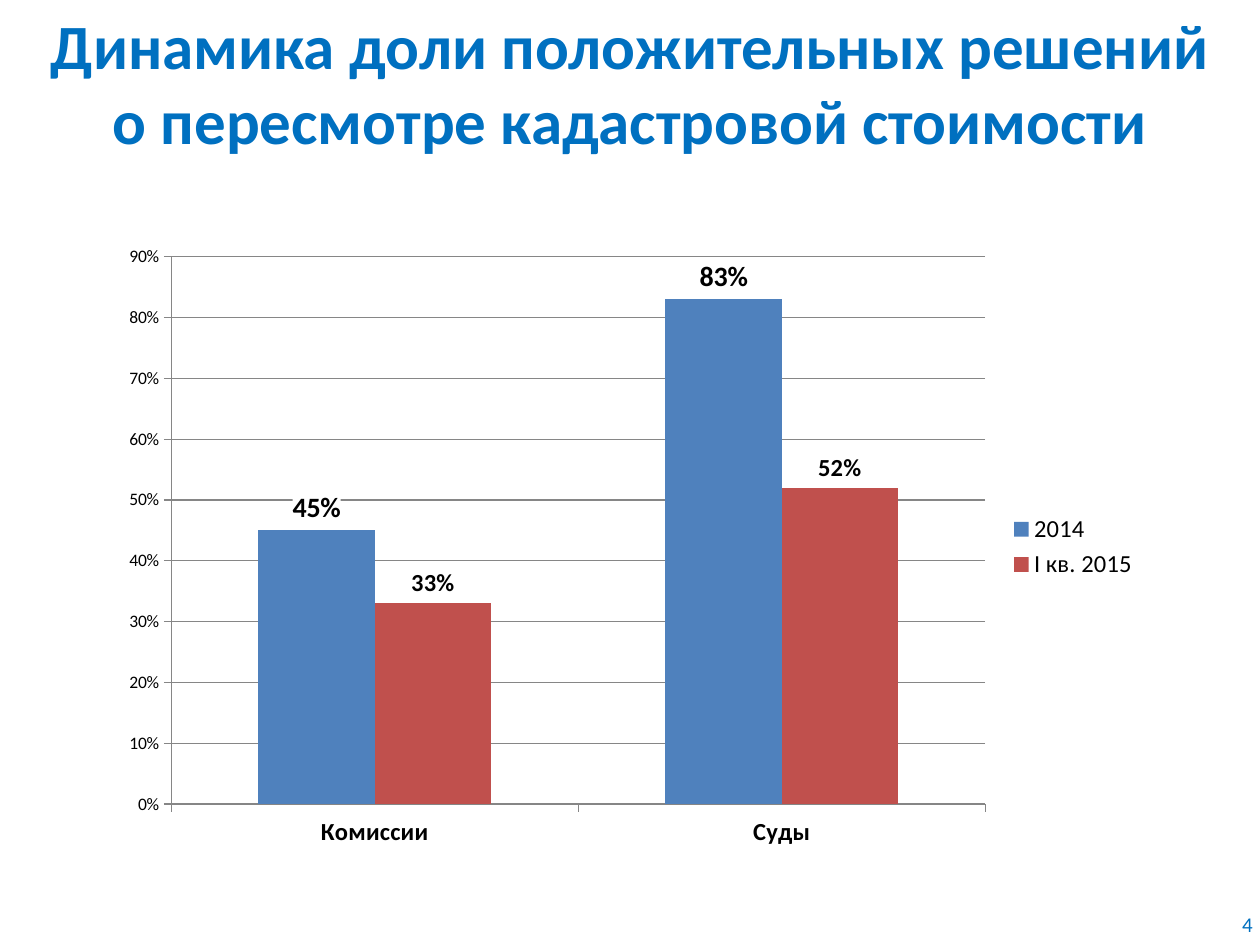
from dataclasses import dataclass

from lxml.etree import fromstring
from pptx import Presentation
from pptx.chart.data import CategoryChartData
from pptx.dml.color import RGBColor
from pptx.enum.chart import XL_CHART_TYPE as ChartType
from pptx.enum.chart import XL_LABEL_POSITION as LabelPosition
from pptx.enum.chart import XL_LEGEND_POSITION as LegendPosition
from pptx.enum.chart import XL_TICK_MARK as TickMark
from pptx.enum.text import MSO_ANCHOR as Anchor
from pptx.enum.text import MSO_AUTO_SIZE as AutoSize
from pptx.enum.text import PP_ALIGN as Align
from pptx.util import Pt


@dataclass(frozen=True)
class Theme:
    font: str = "Calibri"
    accent: RGBColor = RGBColor(0x00, 0x70, 0xC0)
    text: RGBColor = RGBColor(0x00, 0x00, 0x00)
    grid: RGBColor = RGBColor(0x86, 0x86, 0x86)
    blue: RGBColor = RGBColor(0x4F, 0x81, 0xBD)
    red: RGBColor = RGBColor(0xC0, 0x50, 0x4D)
    title_size: int = 36
    label_size: int = 16
    chart_size: int = 14
    page_size: int = 12
    axis_size: int = 10


THEME = Theme()
TITLE = ["Динамика доли положительных решений", "о пересмотре кадастровой стоимости"]
CATEGORIES = ["Комиссии", "Суды"]
# Name, shares, bar colour, label size
SERIES = [
    ("2014", [0.45, 0.83], THEME.blue, THEME.label_size),
    ("I кв. 2015", [0.33, 0.52], THEME.red, THEME.chart_size),
]
WHITE_LABEL = (
    '<c:spPr xmlns:c="http://schemas.openxmlformats.org/drawingml/2006/chart"'
    ' xmlns:a="http://schemas.openxmlformats.org/drawingml/2006/main">'
    '<a:solidFill><a:srgbClr val="FFFFFF"/></a:solidFill></c:spPr>'
)


def apply(target, **values):
    for name, value in values.items():
        setattr(target, name, value)


def style_font(font, size, color, bold=False):
    apply(font, name=THEME.font, size=Pt(size), bold=bold)
    font.color.rgb = color


def write_lines(shape, lines, size, align, bold=False):
    frame = shape.text_frame
    apply(frame, word_wrap=True, auto_size=AutoSize.NONE, vertical_anchor=Anchor.TOP)
    for index, line in enumerate(lines):
        para = frame.paragraphs[0] if index == 0 else frame.add_paragraph()
        para.alignment = align
        span = para.add_run()
        span.text = line
        style_font(span.font, size, THEME.accent, bold)


def add_title(page):
    title = page.shapes.title
    apply(title, left=Pt(0), top=Pt(0), width=Pt(720), height=Pt(94.5))
    write_lines(title, TITLE, THEME.title_size, Align.CENTER, bold=True)


def add_page_number(page, number):
    box = page.shapes.add_textbox(Pt(680.5), Pt(517.5), Pt(42.5), Pt(22))
    write_lines(box, [number], THEME.page_size, Align.RIGHT)


def style_axes(chart):
    category, value = chart.category_axis, chart.value_axis
    apply(value, has_major_gridlines=True, minimum_scale=0, maximum_scale=0.9, major_unit=0.1)
    apply(value.tick_labels, number_format="0%", number_format_is_linked=False)
    style_font(value.tick_labels.font, THEME.axis_size, THEME.text)
    style_font(category.tick_labels.font, THEME.chart_size, THEME.text, bold=True)
    for axis in (category, value):
        axis.major_tick_mark = TickMark.OUTSIDE
    for line in (category.format.line, value.format.line, value.major_gridlines.format.line):
        line.color.rgb = THEME.grid
        line.width = Pt(0.75)


def style_series(series, color, label_size):
    series.format.fill.solid()
    series.format.fill.fore_color.rgb = color
    labels = series.data_labels
    apply(labels, show_value=True, number_format="0%", number_format_is_linked=False,
          position=LabelPosition.OUTSIDE_END)
    style_font(labels.font, label_size, THEME.text, bold=True)
    return labels


def add_share_chart(page):
    data = CategoryChartData(number_format="0%")
    data.categories = CATEGORIES
    for name, shares, _, _ in SERIES:
        data.add_series(name, shares)
    chart = page.shapes.add_chart(
        ChartType.COLUMN_CLUSTERED, Pt(62), Pt(134), Pt(595.5), Pt(357), data
    ).chart
    apply(chart, has_title=False, has_legend=True)
    style_font(chart.font, THEME.axis_size, THEME.text)
    apply(chart.legend, position=LegendPosition.RIGHT, include_in_layout=False)
    style_font(chart.legend.font, THEME.chart_size, THEME.text)
    style_axes(chart)

    plot = chart.plots[0]
    apply(plot, gap_width=150, overlap=0, vary_by_categories=False)
    labels = [style_series(series, color, size)
              for series, (_, _, color, size) in zip(plot.series, SERIES)]
    # White backing keeps the 2014 labels clear of the gridlines
    number_format = labels[0]._element.find("{*}numFmt")
    number_format.addnext(fromstring(WHITE_LABEL))


def main():
    deck = Presentation()
    apply(deck, slide_width=Pt(720), slide_height=Pt(540))
    page = deck.slides.add_slide(deck.slide_layouts[5])
    add_page_number(page, "4")
    add_title(page)
    add_share_chart(page)
    deck.save("out.pptx")


if __name__ == "__main__":
    main()
